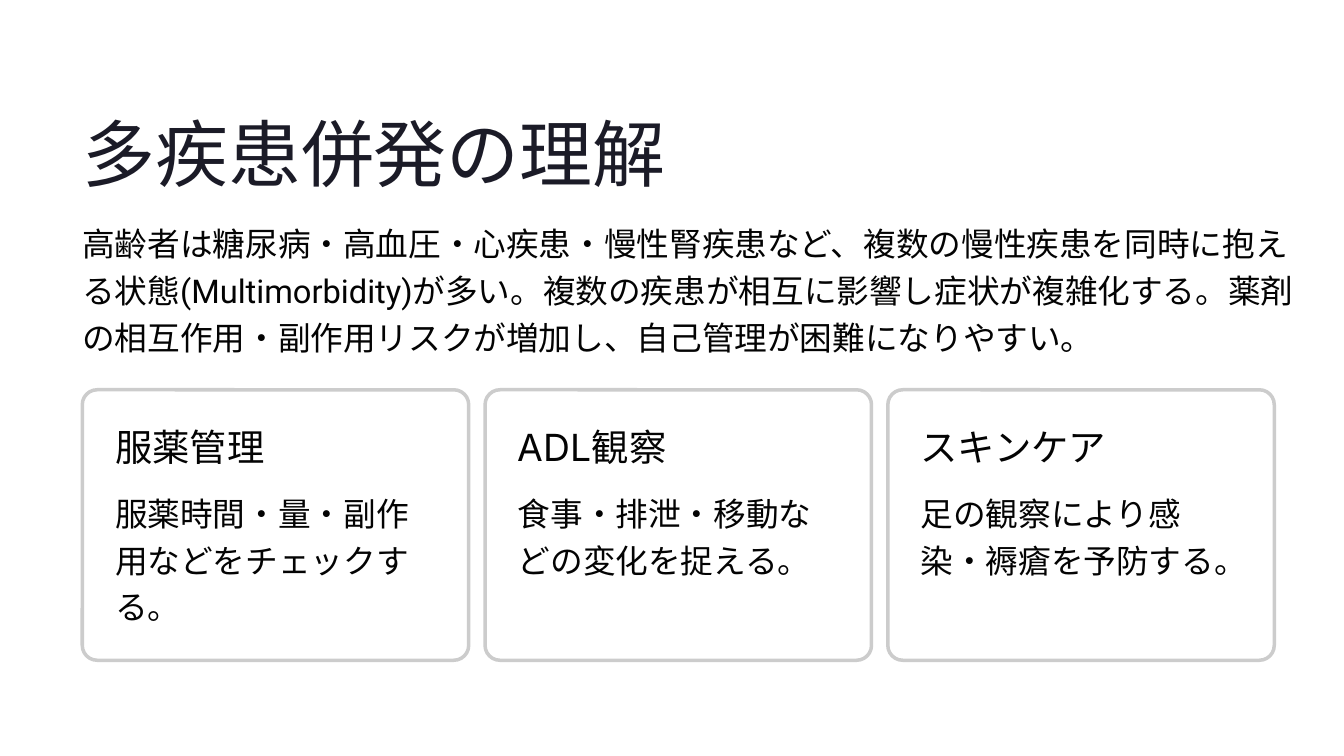
from lxml.etree import SubElement
from pptx import Presentation
from pptx.dml.color import RGBColor
from pptx.enum.shapes import MSO_SHAPE as SHAPE
from pptx.enum.text import MSO_ANCHOR as ANCHOR, PP_ALIGN as ALIGN
from pptx.oxml.ns import qn
from pptx.util import Emu, Pt

PX = 9144  # 100 px to the inch
WHITE = RGBColor(0xFF, 0xFF, 0xFF)
NAVY = RGBColor(0x1B, 0x1B, 0x27)
INK = RGBColor(0x03, 0x03, 0x03)
GREY = RGBColor(0xCC, 0xCC, 0xCC)
HEAD_FONT, BODY_FONT = "Inter", "Roboto"

CARDS = [
    ("服薬管理", "服薬時間・量・副作用などをチェックする。"),
    ("ADL観察", "食事・排泄・移動などの変化を捉える。"),
    ("スキンケア", "足の観察により感染・褥瘡を予防する。"),
]


def px(*lengths):
    return [Emu(round(n * PX)) for n in lengths]


def add_text(slide, box, text, font, size, leading, color=INK, wrap=False):
    tf = slide.shapes.add_textbox(*px(*box)).text_frame
    tf.margin_left = tf.margin_top = tf.margin_right = tf.margin_bottom = 0
    tf.word_wrap = wrap
    tf.vertical_anchor = ANCHOR.TOP
    p = tf.paragraphs[0]
    p.alignment = ALIGN.LEFT
    p.line_spacing = Pt(leading)
    r = p.add_run()
    r.text = text
    r.font.name = font
    r.font.size = Pt(size)
    r.font.color.rgb = color


def add_body(slide, box, text):
    add_text(slide, box, text, BODY_FONT, 28, 40, wrap=True)


def add_card(slide, box, heading, body):
    x, y, w, h = box
    sp = slide.shapes.add_shape(SHAPE.ROUNDED_RECTANGLE, *px(*box))
    sp.adjustments[0] = 0.055
    sp.shadow.inherit = False
    sp.fill.solid()
    sp.fill.fore_color.rgb = WHITE
    # Slightly transparent fill
    clr = sp.fill._xPr.find(qn("a:solidFill"))[0]
    SubElement(clr, qn("a:alpha")).set("val", "95000")
    sp.line.color.rgb = GREY
    sp.line.width = Pt(3)
    add_text(slide, (x + 39, y + 40, 379, 66), heading, HEAD_FONT, 32, 39)
    add_body(slide, (x + 39, y + 115, 379, 136), body)


def add_card_row(slide, box, cards, card_w):
    x, y, w, h = box
    pitch = (w - card_w) / (len(cards) - 1)
    for i, (heading, body) in enumerate(cards):
        add_card(slide, (x + i * pitch, y, card_w, h), heading, body)


def add_intro(slide, box):
    x, y, w, h = box
    add_text(slide, (x, y, 873, 109), "多疾患併発の理解", HEAD_FONT, 62.5, 78.5, NAVY)
    add_body(slide, (x, y + 134, w, h - 134),
             "高齢者は糖尿病・高血圧・心疾患・慢性腎疾患など、複数の慢性疾患を同時に抱える状態"
             "(Multimorbidity)が多い。複数の疾患が相互に影響し症状が複雑化する。"
             "薬剤の相互作用・副作用リスクが増加し、自己管理が困難になりやすい。")


def main():
    prs = Presentation()
    prs.slide_width, prs.slide_height = px(1600, 900)
    slide = prs.slides.add_slide(prs.slide_layouts[6])
    slide.background.fill.solid()
    slide.background.fill.fore_color.rgb = WHITE

    # Title and lead paragraph
    add_intro(slide, (98, 124, 1452, 337))
    # Care points
    add_card_row(slide, (98, 464, 1419, 322), CARDS, 460)

    prs.save("out.pptx")


if __name__ == "__main__":
    main()
